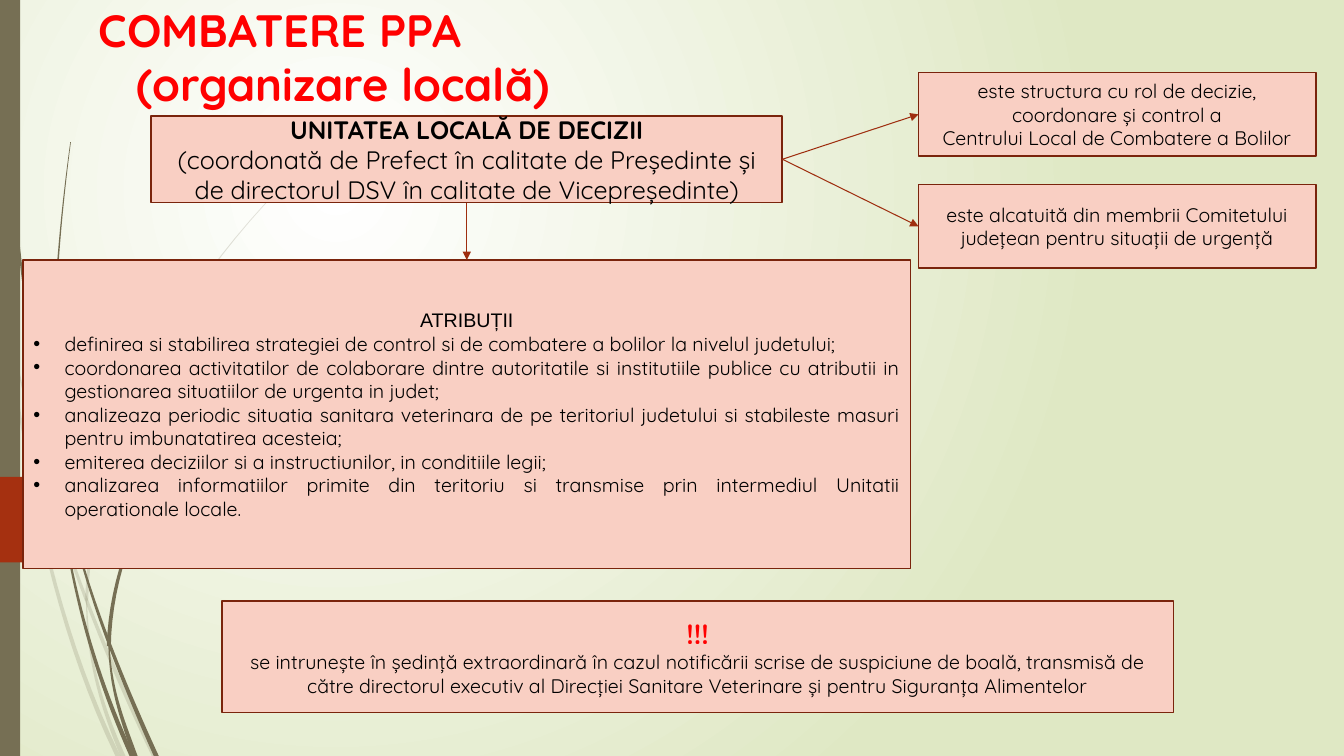
from dataclasses import dataclass

from lxml.etree import SubElement
from pptx import Presentation
from pptx.dml.color import RGBColor as Rgb
from pptx.enum.shapes import MSO_CONNECTOR as Link, MSO_SHAPE as Form
from pptx.enum.text import MSO_ANCHOR as Anchor, MSO_AUTO_SIZE as Fit, PP_ALIGN as Align
from pptx.oxml.ns import qn
from pptx.util import Inches, Pt

FONT = "Quicksand"
OLIVE, RUST, PINK, EDGE, ARROW = "766F54", "A53010", "F9CFC3", "7A240C", "9E2E0F"
RED, BLACK, WHITE, LEAF = "FF0000", "000000", "FFFFFF", "DFE8C4"
TOP, LEFT, BOTTOM, RIGHT = range(4)
STEPS = 24

Point = tuple[float, float]


@dataclass
class Line:
    text: str
    size: float = 14
    bold: bool = False
    hue: str = BLACK
    font: str = FONT
    align: Align = Align.CENTER
    indent: float = 0
    bullet: bool = False


@dataclass
class Box:
    left: float
    top: float
    width: float
    height: float
    lines: list[Line]


@dataclass
class Stem:
    tip: Point
    bend: Point
    sway: Point
    root: Point
    wide: float = .05
    alpha: int = 100

    def at(self, t: float) -> Point:
        u = 1 - t
        parts = (u ** 3, 3 * u * u * t, 3 * u * t * t, t ** 3)
        knots = (self.tip, self.bend, self.sway, self.root)
        x, y = (sum(p * k[axis] for p, k in zip(parts, knots)) for axis in (0, 1))
        return x, y

    def rim(self) -> list[Point]:
        left, right = [], []
        for step in range(STEPS + 1):
            t = step / STEPS
            x, y = self.at(t)
            half = self.wide * (.2 + .8 * t) / 2
            left.append((x - half, y))
            right.append((x + half, y))
        return left + right[::-1]


STEMS = [
    Stem((3.12, 1.53), (1.75, 2.8), (.9, 4.4), (.86, 5.96), .03, 20),
    Stem((0, 2.82), (.2, 4), (.35, 5.8), (1.17, 7.5), alpha=20),
    Stem((.14, 3.45), (.4, 4.8), (.85, 6.1), (1.53, 7.5), alpha=20),
    Stem((.86, 5.96), (.86, 6.5), (1, 7), (1.22, 7.5), alpha=20),
    Stem((.04, 0), (.06, 1.6), (.25, 3.4), (.57, 4.8), .03),
    Stem((.57, 4.77), (.68, 5.7), (.9, 6.6), (1.31, 7.5)),
    Stem((.6, 4.72), (.8, 5.7), (1.1, 6.5), (1.55, 7.5)),
    Stem((.7, 1.41), (.58, 2.3), (.46, 3.6), (.59, 4.72), .03),
    Stem((2.6, 3.44), (1.7, 4.3), (1.1, 5.4), (1.08, 6.41), .04),
    Stem((1.08, 6.31), (1.08, 6.8), (1.2, 7.1), (1.34, 7.5)),
]

BAR = Box(0, 0, .2, 7.5, [])
FLAG = Box(0, 4.73, 1.91, .85, [])
HEAD = Box(.88, 0, 5, 1.15, [
    Line("COMBATERE PPA", 32.4, True, RED, align=Align.LEFT),
    Line("(organizare locală)", 32.4, True, RED, align=Align.LEFT, indent=.37),
])
UNIT = Box(1.5, 1.15, 6.26, .86, [
    Line("UNITATEA LOCALĂ DE DECIZII", 18, True),
    Line("(coordonată de Prefect în calitate de Președinte și de directorul DSV în calitate de Vicepreședinte)", 18),
])
ROLE = Box(9.11, .72, 3.94, .83, [
    Line("este structura cu rol de decizie, coordonare și control a"),
    Line("Centrului Local de Combatere a Bolilor"),
])
CREW = Box(9.11, 1.83, 3.94, .83, [
    Line("este alcatuită din membrii Comitetului județean pentru situații de urgență"),
])
TASKS = [
    "definirea si stabilirea strategiei de control si de combatere a bolilor la nivelul judetului;",
    "coordonarea activitatilor de colaborare dintre autoritatile si institutiile publice cu atributii in gestionarea situatiilor de urgenta in judet;",
    "analizeaza periodic situatia sanitara veterinara de pe teritoriul judetului si stabileste masuri pentru imbunatatirea acesteia;",
    "emiterea deciziilor si a instructiunilor, in conditiile legii;",
    "analizarea informatiilor primite din teritoriu si transmise prin intermediul Unitatii operationale locale.",
]
DUTY = Box(.23, 2.58, 8.8, 3.06, [Line("ATRIBUȚII", font="Arial")] + [
    Line(task, align=Align.JUSTIFY, indent=.31, bullet=True) for task in TASKS
])
ALERT = Box(2.2, 5.96, 9.44, 1.11, [
    Line("!!!", 20, True, RED),
    Line("se intrunește în ședință extraordinară în cazul notificării scrise de suspiciune de boală, transmisă de către directorul executiv al Direcției Sanitare Veterinare și pentru Siguranța Alimentelor"),
])


def tint(fill, hue: str) -> None:
    fill.solid()
    fill.fore_color.rgb = Rgb.from_string(hue)


def write(shape, lines: list[Line], anchor: Anchor) -> None:
    frame = shape.text_frame
    frame.text = "\n".join(line.text for line in lines)
    frame.word_wrap = True
    frame.auto_size = Fit.NONE
    frame.vertical_anchor = anchor
    for para, line in zip(frame.paragraphs, lines):
        para.alignment = line.align
        para.space_before = Pt(0)
        props = para._p.get_or_add_pPr()
        props.set("marL", str(Inches(line.indent)))
        props.set("indent", str(-Inches(line.indent) if line.bullet else 0))
        if line.bullet:
            SubElement(props, qn("a:buFont"), typeface="Arial")
            SubElement(props, qn("a:buChar"), char="•")
        else:
            SubElement(props, qn("a:buNone"))
        for run in para.runs:
            run.font.name = line.font
            run.font.size = Pt(line.size)
            run.font.bold = line.bold
            tint(run.font.fill, line.hue)


def place(shape, box: Box) -> None:
    shape.left, shape.top = Inches(box.left), Inches(box.top)
    shape.width, shape.height = Inches(box.width), Inches(box.height)


def dress(shape, box: Box):
    place(shape, box)
    tint(shape.fill, PINK)
    tint(shape.line.fill, EDGE)
    shape.line.width = Pt(1.25)
    write(shape, box.lines, Anchor.MIDDLE)
    return shape


def panel(shapes, box: Box):
    shape = shapes.add_shape(Form.RECTANGLE, 0, 0, 0, 0)
    shape.shadow.inherit = False
    return dress(shape, box)


def flat(shape, hue: str) -> None:
    shape.shadow.inherit = False
    tint(shape.fill, hue)
    shape.line.fill.background()


def grow(shapes, stem: Stem) -> None:
    dots = [(Inches(x), Inches(y)) for x, y in stem.rim()]
    pen = shapes.build_freeform(*dots[0])
    pen.add_line_segments(dots[1:], close=True)
    shape = pen.convert_to_shape()
    flat(shape, OLIVE)
    if stem.alpha < 100:
        color = shape._element.spPr.find(qn("a:solidFill"))[0]
        SubElement(color, qn("a:alpha"), val=str(stem.alpha * 1000))


def join(shapes, start, side: int, end, port: int) -> None:
    link = shapes.add_connector(Link.STRAIGHT, 0, 0, 0, 0)
    link.begin_connect(start, side)
    link.end_connect(end, port)
    tint(link.line.fill, ARROW)
    link.line.width = Pt(.75)
    SubElement(link.line._get_or_add_ln(), qn("a:tailEnd"), type="triangle")
    SubElement(link._element.spPr, qn("a:effectLst"))


def paint(slide) -> None:
    fill = slide.background.fill
    fill.gradient()
    for stop, hue in zip(fill.gradient_stops, (WHITE, LEAF)):
        stop.color.rgb = Rgb.from_string(hue)
    grad = slide._element.find(".//" + qn("a:gradFill"))
    grad.remove(grad.find(qn("a:lin")))
    glow = SubElement(grad, qn("a:path"), path="circle")
    SubElement(glow, qn("a:fillToRect"), l="50000", t="50000", r="100000", b="100000")


def main() -> None:
    deck = Presentation()
    deck.slide_width, deck.slide_height = Inches(13.33), Inches(7.5)
    slide = deck.slides.add_slide(deck.slide_layouts[1])
    shapes = slide.shapes
    paint(slide)
    for stem in STEMS:
        grow(shapes, stem)
    for form, box, hue in ((Form.RECTANGLE, BAR, OLIVE), (Form.PENTAGON, FLAG, RUST)):
        shape = shapes.add_shape(form, 0, 0, 0, 0)
        place(shape, box)
        flat(shape, hue)

    title, body = shapes.title, slide.placeholders[1]
    for holder in (title, body):
        shapes._spTree.append(holder._element)
    place(title, HEAD)
    write(title, HEAD.lines, Anchor.BOTTOM)
    duty = dress(body, DUTY)
    unit, role, crew, _ = [panel(shapes, box) for box in (UNIT, ROLE, CREW, ALERT)]
    for side, end, port in ((RIGHT, role, LEFT), (RIGHT, crew, LEFT), (BOTTOM, duty, TOP)):
        join(shapes, unit, side, end, port)
    deck.save("out.pptx")


if __name__ == "__main__":
    main()
